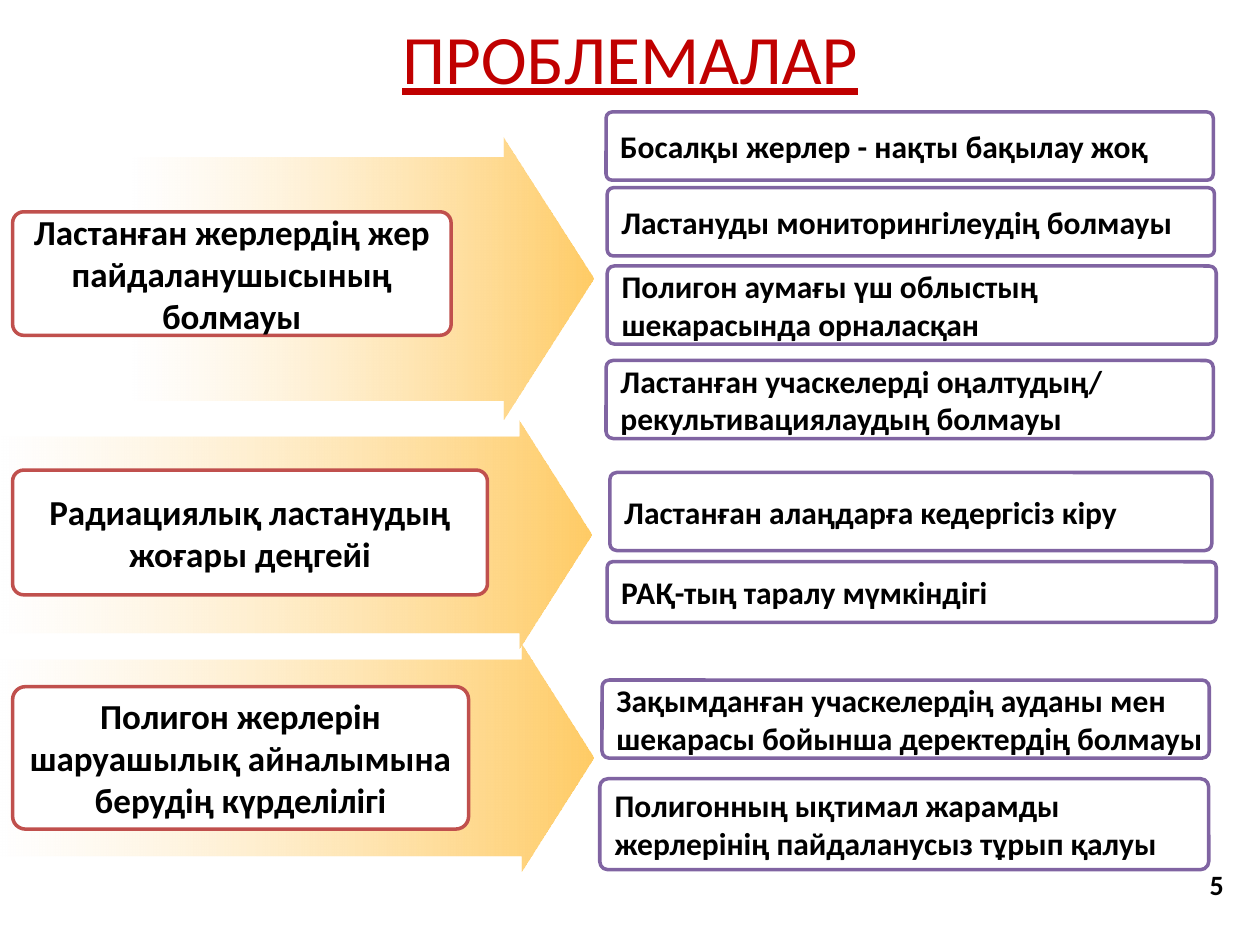
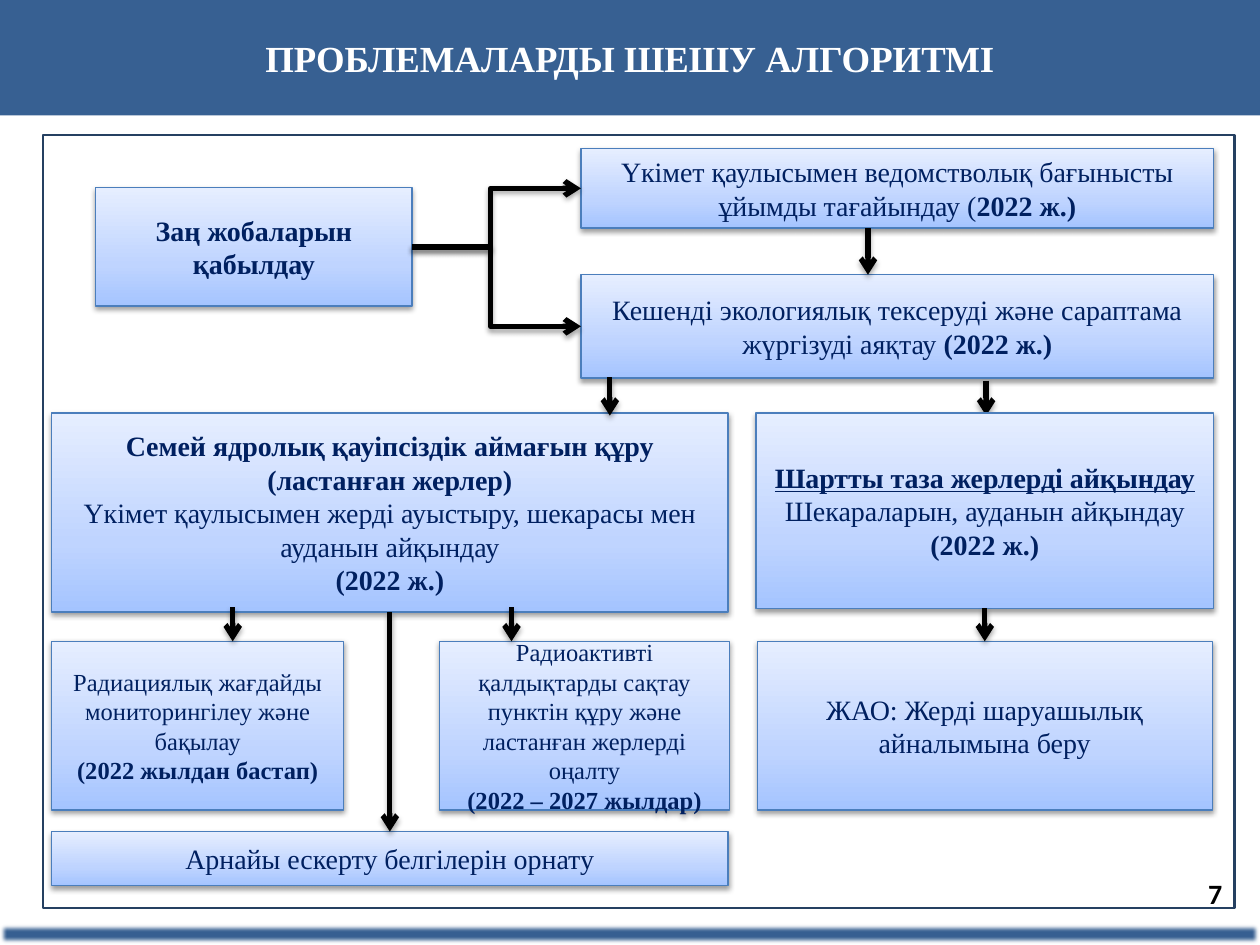
import pptx
import pptx.util
import pptx.dml.color
import pptx.enum.shapes
import pptx.enum.text
import pptx.oxml
import pptx.oxml.ns

Pt = pptx.util.Pt
SHAPE = pptx.enum.shapes.MSO_SHAPE
LINK = pptx.enum.shapes.MSO_CONNECTOR
ALIGN = pptx.enum.text.PP_ALIGN
qn = pptx.oxml.ns.qn

BLUE, NAVY, EDGE = "376092", "254061", "4B7EBC"
INK, RED, ROSE, PLUM = "002060", "C00000", "C0504D", "8064A2"
BLACK, WHITE = "000000", "FFFFFF"
SANS, SERIF = "Calibri", "Times New Roman"
# Gradient stops: position, colour, opacity in percent
GOLD = [(0, WHITE, 52), (100, "FFCC66", 100)]
SKY = [(0, "A4C4FF", 100), (35, "BFD4FF", 100), (100, "E6EEFF", 100)]


def color(code):
    return pptx.dml.color.RGBColor.from_string(code)


def node(tag, inner="", **attrs):
    """Build the text of one drawing element."""
    space = 'xmlns:a="http://schemas.openxmlformats.org/drawingml/2006/main"'
    pairs = " ".join(f'{key}="{val}"' for key, val in attrs.items())
    return f"<a:{tag} {space} {pairs}>{inner}</a:{tag}>"


def tint(code, alpha):
    return node("srgbClr", node("alpha", val=alpha * 1000), val=code)


class Deck:
    def __init__(self):
        self.show = pptx.Presentation()
        self.show.slide_width, self.show.slide_height = Pt(720), Pt(540)

    def page(self):
        self.slide = self.show.slides.add_slide(self.show.slide_layouts[6])

    def text(self, item, paras, size, font, ink, bold=False, align=ALIGN.CENTER):
        """Each paragraph is a string or a list of (words, style); b bold, u underlined."""
        frame = item.text_frame
        frame.word_wrap = True
        frame.vertical_anchor = pptx.enum.text.MSO_ANCHOR.MIDDLE
        base = "b" if bold else ""
        for spot, para in enumerate(paras):
            parts = [(para, base)] if isinstance(para, str) else para
            line = frame.add_paragraph() if spot else frame.paragraphs[0]
            line.text = parts[0][0]
            line.alignment = align
            for words, _ in parts[1:]:
                line.add_run().text = words
            for run, (_, style) in zip(line.runs, parts):
                run.font.name, run.font.size = font, Pt(size)
                run.font.color.rgb = color(ink)
                run.font.bold = "b" in style
                run.font.underline = "u" in style

    def label(self, place, words, size, ink, **style):
        item = self.slide.shapes.add_textbox(*map(Pt, place))
        self.text(item, [words], size, SANS, ink, **style)

    def number(self, place, words):
        self.label(place, words, 16, BLACK, bold=True, align=ALIGN.RIGHT)

    def shape(self, kind, place, fill=None, line=None, width=1, turn=0):
        """Fill is a colour, a list of gradient stops, or None."""
        item = self.slide.shapes.add_shape(kind, *map(Pt, place))
        item.shadow.inherit = False
        if fill is None:
            item.fill.background()
        elif isinstance(fill, str):
            item.fill.solid()
            item.fill.fore_color.rgb = color(fill)
        else:
            item.fill.gradient()
            item.fill.gradient_angle = turn
            stops = item.element.spPr.find(".//" + qn("a:gsLst"))
            stops.clear()
            for pos, code, alpha in fill:
                stop = node("gs", tint(code, alpha), pos=pos * 1000)
                stops.append(pptx.oxml.parse_xml(stop))
        if line:
            item.line.color.rgb, item.line.width = color(line), Pt(width)
        else:
            item.line.fill.background()
        return item

    def effect(self, item, inner):
        props = item.element.spPr
        for old in props.findall(qn("a:effectLst")):
            props.remove(old)
        props.append(pptx.oxml.parse_xml(node("effectLst", inner)))

    def shade(self, item, alpha, dist):
        self.effect(item, node("outerShdw", tint(BLACK, alpha), blurRad=Pt(3.1),
                               dist=Pt(dist), dir=5400000, rotWithShape=0))

    def arrow(self, place):
        item = self.shape(SHAPE.RIGHT_ARROW, place, GOLD)
        item.adjustments[0], item.adjustments[1] = 0.86, 0.32

    def card(self, place, paras, line, size, align=ALIGN.CENTER):
        item = self.shape(SHAPE.ROUNDED_RECTANGLE, place, WHITE, line, 2)
        item.adjustments[0] = 0.09
        self.text(item, paras, size, SANS, BLACK, True, align)
        if align == ALIGN.LEFT:
            item.text_frame.margin_right = 0

    def step(self, place, paras, size=16):
        item = self.shape(SHAPE.RECTANGLE, place, SKY, EDGE, 0.75, turn=90)
        self.shade(item, 38, 1.6)
        self.text(item, paras, size, SERIF, INK)
        return item

    def link(self, start=(0, 0), end=(0, 0), kind=LINK.STRAIGHT, ends=None):
        """Draw between two points, or join ends: (shape, side, shape, side)."""
        item = self.slide.shapes.add_connector(kind, *map(Pt, (*start, *end)))
        if ends:
            item.begin_connect(*ends[:2])
            item.end_connect(*ends[2:])
        item.line.color.rgb, item.line.width = color(BLACK), Pt(3)
        item.line._get_or_add_ln().append(
            pptx.oxml.parse_xml(node("tailEnd", type="arrow")))
        self.shade(item, 35, 1.8)
        return item

    def bend(self, *ends):
        item = self.link(kind=LINK.ELBOW, ends=ends)
        guide = node("gd", name="adj1", fmla="val 46500")
        item.element.spPr.find(".//" + qn("a:avLst")).append(
            pptx.oxml.parse_xml(guide))


def issues(deck):
    deck.page()
    # Wide arrows behind the causes
    for place in [(0, 368, 339, 130), (0.7, 240.5, 337, 130),
                  (75.5, 78.5, 263.5, 161.5)]:
        deck.arrow(place)
    deck.label((36, 8, 648, 49), [("ПРОБЛЕМАЛАР", "u")], 39.6, RED)

    # Causes: top, width, height, words
    for top, width, height, words in [
        (121, 250.6, 70.6, "Ластанған жерлердің жер пайдаланушысының болмауы"),
        (268.6, 271.4, 71.3, "Радиациялық ластанудың жоғары деңгейі"),
        (392.4, 260.6, 81.4,
         "Полигон жерлерін шаруашылық айналымына берудің күрделілігі"),
    ]:
        deck.card((7.2, top, width, height), [words], ROSE, 20)

    # Effects: left, top, width, height, lines
    for *place, paras in [
        (346.3, 64, 347, 39, ["Босалқы жерлер - нақты бақылау жоқ"]),
        (347, 107.3, 347, 39, ["Ластануды мониторингілеудің болмауы"]),
        (347, 152, 348, 44.6,
         ["Полигон аумағы үш облыстың", "шекарасында орналасқан"]),
        (346.3, 206, 347, 44.6,
         ["Ластанған учаскелерді оңалтудың/", "рекультивациялаудың болмауы"]),
        (348.5, 270, 344, 44.6, ["Ластанған алаңдарға кедергісіз кіру"]),
        (347, 321, 348, 34.6, ["РАҚ-тың таралу мүмкіндігі"]),
        (344, 388.6, 347, 44.6, ["Зақымданған учаскелердің ауданы мен",
                                 "шекарасы бойынша деректердің болмауы"]),
        (342.7, 445, 348, 52, ["Полигонның ықтимал жарамды",
                               "жерлерінің пайдаланусыз тұрып қалуы"]),
    ]:
        deck.card(place, paras, PLUM, 18, ALIGN.LEFT)
    deck.number((682.6, 491, 23.8, 28.8), "5")


def plan(deck):
    deck.page()
    # Bands and frame
    head = deck.shape(SHAPE.RECTANGLE, (0, 0, 720, 66), BLUE)
    deck.text(head, ["ПРОБЛЕМАЛАРДЫ ШЕШУ АЛГОРИТМІ"], 21, SERIF, WHITE, True)
    foot = deck.shape(SHAPE.RECTANGLE, (0, 527.8, 720, 12.2), BLUE)
    deck.effect(foot, node("softEdge", rad=Pt(2.5)))
    deck.shape(SHAPE.FLOWCHART_PROCESS, (24.5, 77, 681, 442), None, NAVY, 1.25)
    deck.number((676, 496, 29.5, 28.8), "7")

    # Steps
    deck.link((563.5, 217.5), (563.5, 237.5))
    year = ("(2022 ж.)", "b")
    law = deck.step((54.7, 107.3, 180.7, 67.7), [[("Заң жобаларын қабылдау", "b")]])
    body = deck.step((332, 85, 361.5, 45.4), [
        [("Үкімет қаулысымен ведомстволық бағынысты ұйымды тағайындау (", ""),
         ("2022 ж.)", "b")]])
    audit = deck.step((332, 157, 361.5, 59), [
        [("Кешенді экологиялық тексеруді және сараптама жүргізуді аяқтау ", ""), year]])
    zone = deck.step((29.5, 236, 386.6, 113.8), [
        [("Семей ядролық қауіпсіздік аймағын құру (ластанған жерлер)", "b")],
        "Үкімет қаулысымен жерді ауыстыру, шекарасы мен ауданын айқындау",
        [year]])
    clean = deck.step((432, 236, 261.5, 111.6), [
        [("Шартты таза жерлерді айқындау", "bu")],
        [("Шекараларын, ауданын айқындау ", ""), year]])
    deck.step((29.5, 366.5, 167, 96.5), [
        "Радиациялық жағдайды мониторингілеу және бақылау",
        [("(2022 жылдан бастап)", "b")]], 14)
    deck.step((251.3, 366.5, 165.6, 96.5), [
        "Радиоактивті қалдықтарды сақтау пунктін құру және "
        "ластанған жерлерді оңалту",
        [("(2022 – 2027 жылдар)", "b")]], 14)
    farm = deck.step((432.75, 366.5, 260, 96.5),
                     ["ЖАО: Жерді шаруашылық айналымына беру"])
    signs = deck.step((29.5, 475.2, 386.6, 31), ["Арнайы ескерту белгілерін орнату"])

    # Links
    for goal in (body, audit):
        deck.bend(law, 3, goal, 1)
    for upper, lower in [(zone, signs), (clean, farm)]:
        deck.link(ends=(upper, 2, lower, 0))
    for left, top, base in [(496, 130.4, 157), (348.5, 215.5, 237.5),
                            (133, 347, 366.5), (292.3, 347, 366.5)]:
        deck.link((left, top), (left, base))


def main():
    deck = Deck()
    issues(deck)
    plan(deck)
    deck.show.save("out.pptx")


if __name__ == "__main__":
    main()
